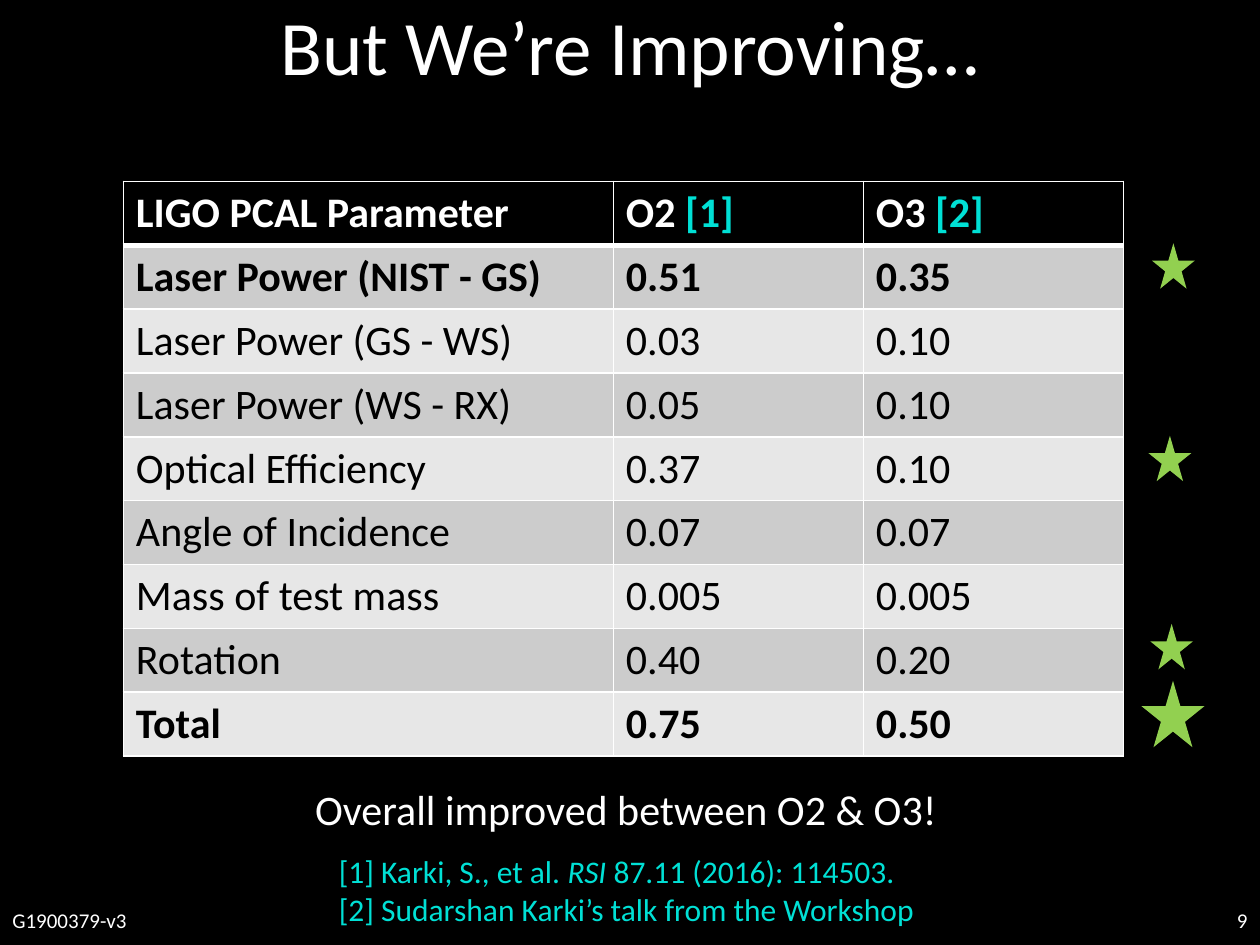
from lxml import etree
from pptx import Presentation
from pptx.dml.color import RGBColor
from pptx.enum import shapes, text
from pptx.oxml import ns
from pptx.util import Pt

FONT = "Calibri"
COLORS = {"black": "000000", "white": "FFFFFF", "cyan": "00E0D5",
          "green": "92D050", "dark": "CCCCCC", "light": "E7E7E7"}
ROWS = [
    ("LIGO PCAL Parameter", "O2 [1]", "O3 [2]"),
    ("Laser Power (NIST - GS)", "0.51", "0.35"),
    ("Laser Power (GS - WS)", "0.03", "0.10"),
    ("Laser Power (WS - RX)", "0.05", "0.10"),
    ("Optical Efficiency", "0.37", "0.10"),
    ("Angle of Incidence", "0.07", "0.07"),
    ("Mass of test mass", "0.005", "0.005"),
    ("Rotation", "0.40", "0.20"),
    ("Total", "0.75", "0.50"),
]
BOLD_ROWS = (0, 1, len(ROWS) - 1)


def rgb(name):
    """Return the named colour."""
    return RGBColor.from_string(COLORS[name])


def style(font, size, color, bold=False):
    """Set face, size, colour and weight of a font."""
    font.name, font.size, font.bold = FONT, Pt(size), bold
    font.color.rgb = rgb(color)


def add_text(slide, box, lines, size, color, align=text.PP_ALIGN.LEFT,
             anchor=text.MSO_ANCHOR.TOP, wrap=True):
    """Add a text box; each line is a list of (text, italic) runs."""
    tf = slide.shapes.add_textbox(*map(Pt, box)).text_frame
    tf.word_wrap, tf.vertical_anchor = wrap, anchor
    if not wrap:
        tf.auto_size = text.MSO_AUTO_SIZE.SHAPE_TO_FIT_TEXT
    for i, line in enumerate(lines):
        p = tf.add_paragraph() if i else tf.paragraphs[0]
        p.alignment = align
        style(p.font, size, color)
        for words, italic in line:
            r = p.add_run()
            r.text = words
            if italic:
                r.font.italic = True


def add_title(slide, box, words):
    """Place the slide title in its placeholder."""
    sp = slide.shapes.title
    sp.left, sp.top, sp.width, sp.height = map(Pt, box)
    tf = sp.text_frame
    tf.text = words
    tf.auto_size = text.MSO_AUTO_SIZE.NONE
    tf.vertical_anchor = text.MSO_ANCHOR.MIDDLE
    p = tf.paragraphs[0]
    p.alignment, p.line_spacing = text.PP_ALIGN.CENTER, 0.9
    style(p.font, 44, "white")


def set_borders(cell, widths):
    """Draw white cell borders with the given widths by side."""
    tc_pr = cell._tc.get_or_add_tcPr()
    for side in "LRTB":
        ln = etree.SubElement(tc_pr, ns.qn(f"a:ln{side}"), w=str(Pt(widths[side])))
        fill = etree.SubElement(ln, ns.qn("a:solidFill"))
        etree.SubElement(fill, ns.qn("a:srgbClr"), val=COLORS["white"])


def fill_cell(cell, words, row):
    """Write one table cell, with any bracketed reference in cyan."""
    set_borders(cell, {"L": 1, "R": 1, "T": 3 if row == 1 else 1, "B": 1 if row else 3})
    cell.fill.solid()
    cell.fill.fore_color.rgb = rgb(("dark" if row % 2 else "light") if row else "black")
    p = cell.text_frame.paragraphs[0]
    style(p.font, 24, "black" if row else "white", row in BOLD_ROWS)
    label, bracket, ref = words.partition("[")
    p.add_run().text = label
    if bracket:
        r = p.add_run()
        r.text = bracket + ref
        r.font.color.rgb = rgb("cyan")


def add_parameter_table(slide, box):
    """Add the table of uncertainties for the two runs."""
    table = slide.shapes.add_table(len(ROWS), len(ROWS[0]), *map(Pt, box)).table
    table.horz_banding = False
    for column, share in zip(table.columns, (0.49, 0.25, 0.26)):
        column.width = Pt(round(box[2] * share, 2))
    for i, row in enumerate(ROWS):
        for j, words in enumerate(row):
            fill_cell(table.cell(i, j), words, i)


def add_stars(slide, box):
    """Mark the improved rows with stars, the total with a larger one."""
    left, top, width, _ = box
    for dx, dy, w, h in ((6, 0, 24.5, 26), (4, 110, 24.5, 26),
                         (5, 217.5, 24.5, 26), (0, 250, width, 38)):
        sp = slide.shapes.add_shape(shapes.MSO_SHAPE.STAR_5_POINT,
                                    Pt(left + dx), Pt(top + dy), Pt(w), Pt(h))
        sp.shadow.inherit = False
        sp.fill.solid()
        sp.fill.fore_color.rgb = rgb("green")
        sp.line.fill.background()


def add_footer(slide, box):
    """Add the document number at the left and the page number at the right."""
    left, top, width, height = box
    part = 162
    for x, words, align in ((left, "G1900379-v3", text.PP_ALIGN.LEFT),
                            (left + width - part, "9", text.PP_ALIGN.RIGHT)):
        add_text(slide, (x, top, part, height), [[(words, False)]], 12, "white",
                 align, text.MSO_ANCHOR.MIDDLE)


def add_notes_below(slide, box):
    """Add the conclusion and the references under the table."""
    left, top, width, height = box
    add_text(slide, (left, top, width, 36), [[("Overall improved between O2 & O3!", False)]],
             24, "white", wrap=False)
    references = [
        [("[1] Karki, S., et al. ", False), ("RSI", True),
         ("\u00a087.11 (2016): 114503.".replace("\u00a0", " "), False)],
        [("[2] Sudarshan Karki’s talk from the Workshop", False)],
    ]
    add_text(slide, (left + 13.5, top + 39, width - 26, height - 39), references,
             18, "cyan", wrap=False)


def main():
    """Build the slide and save it."""
    prs = Presentation()
    prs.slide_width, prs.slide_height = Pt(720), Pt(540)
    slide = prs.slides.add_slide(prs.slide_layouts[5])
    slide.background.fill.solid()
    slide.background.fill.fore_color.rgb = rgb("black")
    add_title(slide, (0, 0, 720, 57.6), "But We’re Improving…")
    add_footer(slide, (0, 511, 720, 29))
    add_parameter_table(slide, (70.5, 103.7, 571.5, 328.5))
    add_stars(slide, (652.3, 139, 36, 288))
    add_notes_below(slide, (173, 444.2, 373, 90))
    prs.save("out.pptx")


if __name__ == "__main__":
    main()
